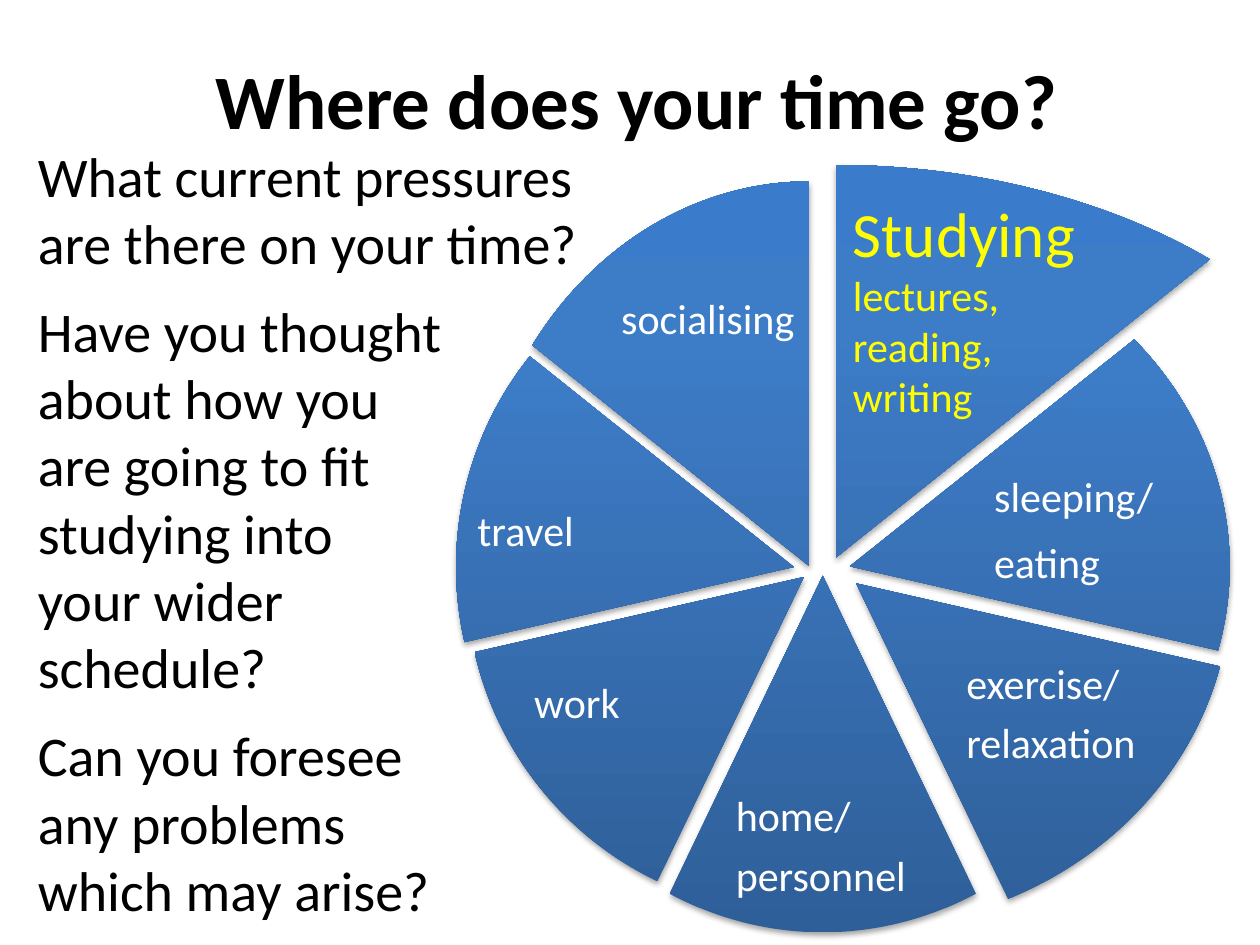
"""Build a slide with a seven-slice pie showing where a student's time goes."""
from dataclasses import dataclass

from lxml import etree
from pptx import Presentation
from pptx import util as u
from pptx.dml.color import RGBColor
from pptx.enum import shapes, text
from pptx.oxml import ns


@dataclass(frozen=True)
class Theme:
    font: str = "Calibri"
    ink: str = "000000"
    label: str = "FFFFFF"
    accent: str = "FFFF00"
    gradient: tuple = ((0, "2F5F99"), (80, "3D7CC7"), (100, "3A7CCB"))
    title_size: int = 44
    body_size: int = 32
    lead_size: int = 36
    label_size: int = 24


THEME = Theme()
TITLE = "Where does your time go?"
QUESTIONS = [
    ["What current pressures are there on your time?"],
    ["Have you thought", "about how you", "are going to fit",
     "studying into", "your wider", "schedule?"],
    ["Can you foresee", "any problems", "which may arise?"],
]
STUDYING = [("Studying ", "lectures,"), ("", "reading,"), ("", "writing")]
STUDYING_BOX = (6.72, 1.9, 2.5, 1.08)
SLICES = [
    {"pie": (2.07, 1.31, 9.13, 6.23)},
    {"pie": (3.73, 1.78, 6.03, 5.43), "box": (7.86, 3.72, 1.75, 1),
     "lines": ["sleeping/", "eating"], "gap": 12},
    {"pie": (3.82, 1.89, 5.95, 5.48), "box": (7.64, 5.16, 1.56, 1.04),
     "lines": ["exercise/", "relaxation"]},
    {"pie": (3.85, 1.74, 5.36, 5.66), "box": (5.81, 6.19, 1.44, 1.08),
     "lines": ["home/", "personnel"]},
    {"pie": (3.7, 1.9, 5.36, 5.36), "box": (4.21, 5.08, 1.4, 1.02),
     "lines": ["work"]},
    {"pie": (3.62, 1.82, 5.36, 5.36), "box": (3.76, 3.73, 1.56, 0.99),
     "lines": ["travel"]},
    {"pie": (3.74, 1.44, 5.36, 6.1), "box": (4.9, 2.02, 1.47, 1.05),
     "lines": ["socialising"]},
]
FULL_TURN, TOP = 216, 162
STEP = FULL_TURN / len(SLICES)


def inches(box):
    return [u.Inches(length) for length in box]


def place(shape, box):
    shape.left, shape.top, shape.width, shape.height = inches(box)


def add_run(paragraph, words, size, color, bold=False):
    run = paragraph.add_run()
    run.text = words
    run.font.name, run.font.size, run.font.bold = THEME.font, u.Pt(size), bold
    run.font.color.rgb = RGBColor.from_string(color)


def paragraphs(frame, items):
    for index, item in enumerate(items):
        paragraph = frame.add_paragraph() if index else frame.paragraphs[0]
        paragraph.alignment = text.PP_ALIGN.LEFT
        paragraph.space_before = paragraph.space_after = u.Pt(0)
        yield paragraph, item


def add_label_frame(group, box, inset):
    frame = group.shapes.add_textbox(*inches(box)).text_frame
    frame.word_wrap = True
    frame.vertical_anchor = text.MSO_ANCHOR.MIDDLE
    frame.margin_left = frame.margin_right = u.Inches(inset)
    frame.margin_top = frame.margin_bottom = u.Inches(inset)
    return frame


def add_slice(group, index, box):
    pie = group.shapes.add_shape(shapes.MSO_SHAPE.PIE, *inches(box))
    for edge in (0, 1):
        pie.adjustments[edge] = (TOP + (index + edge) * STEP) % FULL_TURN
    pie.line.fill.background()
    pie.fill.gradient()
    gradient = pie.element.spPr.find(ns.qn("a:gradFill"))
    stops = gradient.find(ns.qn("a:gsLst"))
    for stop in list(stops):
        stops.remove(stop)
    for position, color in THEME.gradient:
        stop = etree.SubElement(stops, ns.qn("a:gs"), pos=str(position * 1000))
        etree.SubElement(stop, ns.qn("a:srgbClr"), val=color)
    gradient.find(ns.qn("a:lin")).set("ang", "16200000")
    pie.shadow.inherit = False
    effects = pie.element.spPr.find(ns.qn("a:effectLst"))
    shadow = etree.SubElement(effects, ns.qn("a:outerShdw"), blurRad="40000",
                              dist="23000", dir="5400000", rotWithShape="0")
    color = etree.SubElement(shadow, ns.qn("a:srgbClr"), val="000000")
    etree.SubElement(color, ns.qn("a:alpha"), val="35000")


def add_pie(slide):
    group = slide.shapes.add_group_shape()
    for index, part in enumerate(SLICES):
        add_slice(group, index, part["pie"])
        if "lines" not in part:
            frame = add_label_frame(group, STUDYING_BOX, 0.05)
            for paragraph, (lead, detail) in paragraphs(frame, STUDYING):
                if lead:
                    add_run(paragraph, lead, THEME.lead_size, THEME.accent)
                add_run(paragraph, detail, THEME.label_size, THEME.accent)
            continue
        frame = add_label_frame(group, part["box"], 0.03)
        for paragraph, line in paragraphs(frame, part["lines"]):
            paragraph.line_spacing = 0.9
            paragraph.space_after = u.Pt(part.get("gap", 8))
            add_run(paragraph, line, THEME.label_size, THEME.label)


def fill_questions(body):
    place(body, (0.2, 1.07, 4.57, 7.47))
    frame = body.text_frame
    frame.auto_size = text.MSO_AUTO_SIZE.SHAPE_TO_FIT_TEXT
    frame.vertical_anchor = text.MSO_ANCHOR.TOP
    lines = [(line, order > 0 and row == 0)
             for order, question in enumerate(QUESTIONS)
             for row, line in enumerate(question)]
    for paragraph, (line, opens_question) in paragraphs(frame, lines):
        if opens_question:
            paragraph.space_before = u.Pt(12)
        properties = paragraph._p.get_or_add_pPr()
        properties.set("marL", "0")
        properties.set("indent", "0")
        etree.SubElement(properties, ns.qn("a:buNone"))
        add_run(paragraph, line, THEME.body_size, THEME.ink)


def fill_title(title):
    place(title, (1.61, 0.29, 6.95, 0.87))
    frame = title.text_frame
    frame.word_wrap = False
    frame.auto_size = text.MSO_AUTO_SIZE.SHAPE_TO_FIT_TEXT
    frame.vertical_anchor = text.MSO_ANCHOR.TOP
    for paragraph, line in paragraphs(frame, [TITLE]):
        paragraph.line_spacing = 1.1
        add_run(paragraph, line, THEME.title_size, THEME.ink, bold=True)


def main():
    presentation = Presentation()
    presentation.slide_width, presentation.slide_height = inches((10, 7.5))
    slide = presentation.slides.add_slide(presentation.slide_layouts[1])
    fill_title(slide.shapes.title)
    fill_questions(slide.placeholders[1])
    add_pie(slide)
    presentation.save("out.pptx")


if __name__ == "__main__":
    main()
